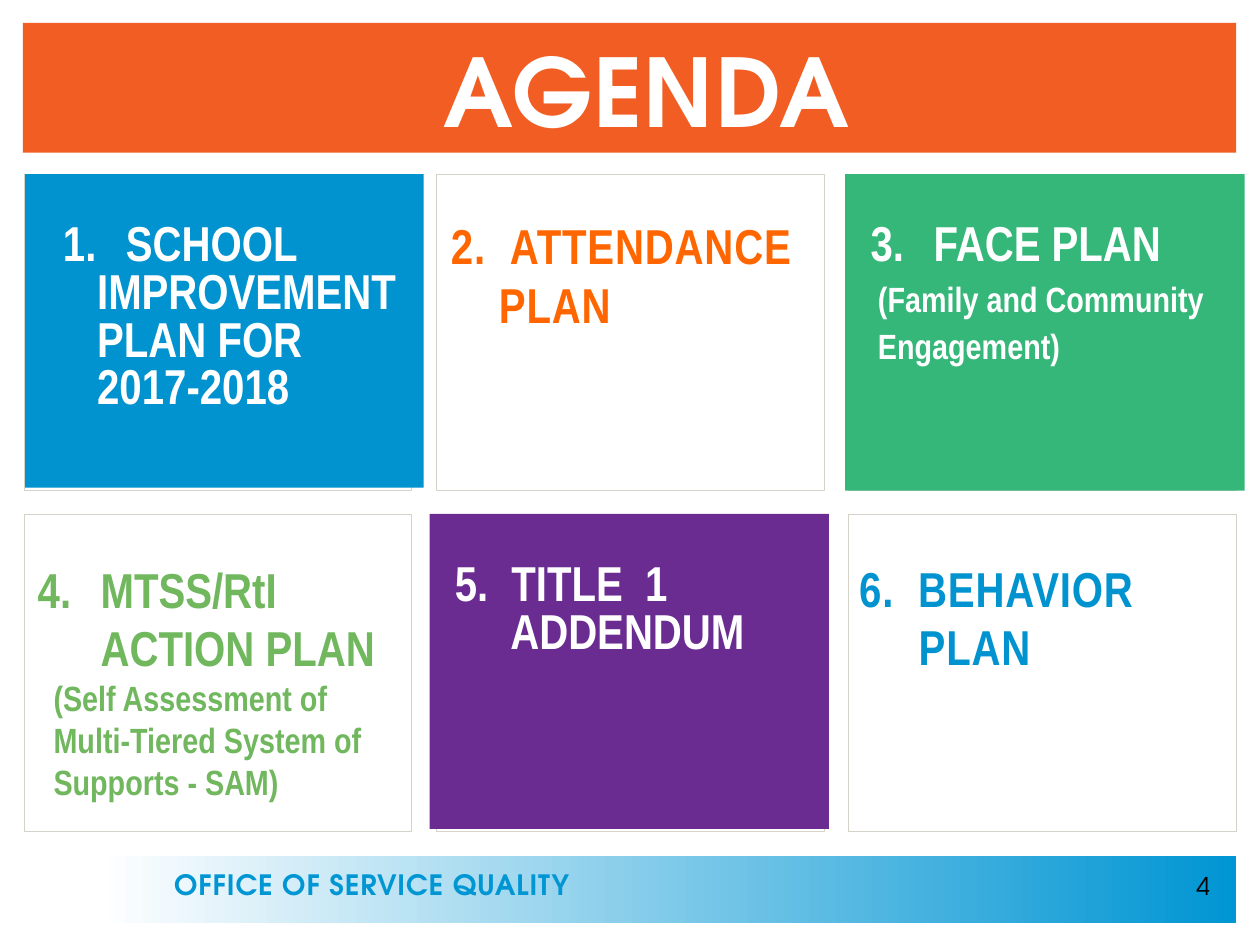
from pptx import Presentation
from pptx.dml.color import RGBColor
from pptx.enum.shapes import MSO_SHAPE
from pptx.enum.text import MSO_ANCHOR, PP_ALIGN
from pptx.oxml.ns import qn
from pptx.util import Cm, Pt
from lxml import etree

RECT = MSO_SHAPE.RECTANGLE
TOP, MID, LOW = MSO_ANCHOR.TOP, MSO_ANCHOR.MIDDLE, MSO_ANCHOR.BOTTOM
LEFT, CENTER, RIGHT = PP_ALIGN.LEFT, PP_ALIGN.CENTER, PP_ALIGN.RIGHT
HEAD, BODY = "TeX Gyre Adventor", "Arial Narrow"
rgb = RGBColor.from_string

deck = Presentation()
deck.slide_width, deck.slide_height = Cm(25.4), Cm(19.05)
slide = deck.slides.add_slide(deck.slide_layouts[6])
shapes = slide.shapes


def add_box(place, fill=None, line=None):
    box = shapes.add_shape(RECT, *[Cm(v) for v in place])
    box.shadow.inherit = False
    if fill:
        box.fill.solid()
        box.fill.fore_color.rgb = rgb(fill)
    else:
        box.fill.background()
    if line:
        box.line.color.rgb = rgb(line)
        box.line.width = Pt(0.25)
    else:
        box.line.fill.background()
    return box


def set_text(para, text, font, size, color, bold=True, track=0, align=LEFT):
    run = para.add_run()
    run.text = text
    if track:
        run._r.get_or_add_rPr().set("spc", str(int(track * 100)))
    para.alignment = align
    para.font.name = font
    para.font.size = Pt(size)
    para.font.bold = bold
    para.font.color.rgb = rgb(color)


# Footer and header bands
foot = add_box((1.98, 17.25, 22.94, 1.35))
foot.fill.gradient()
foot.fill.gradient_angle = 0
for stop, (spot, color) in zip(foot.fill.gradient_stops,
                               [(0, "FFFFFF"), (1, "0095D3")]):
    stop.position = spot
    stop.color.rgb = rgb(color)
add_box((0.46, 0.46, 24.46, 2.62), "F15D22")

# Grid of thin frames
for row in range(2):
    for col in range(3):
        add_box((0.48 + col * 8.31, 3.51 + row * 6.86, 7.82, 6.38),
                line="D5D2C8")

# Title, office name and page number
labels = [
    ("AGENDA", (2.84, 0.51, 20.4, 2.69), 54, "FFFFFF", True, 1, CENTER, LOW,
     (0, 0, 0, 0.25)),
    ("OFFICE OF SERVICE QUALITY", (3.51, 17.48, 11.3, 0.71), 16, "0095D3",
     True, 0.5, LEFT, MID, (0, 0, 0, 0)),
    ("4", (18.72, 17.42, 5.92, 1.02), 14, "000000", False, 0, RIGHT, TOP,
     (0.25, 0.13, 0.25, 0.13)),
]
for text, place, size, color, bold, track, align, anchor, pad in labels:
    frame = shapes.add_textbox(*[Cm(v) for v in place]).text_frame
    frame.word_wrap = True
    frame.vertical_anchor = anchor
    (frame.margin_left, frame.margin_top,
     frame.margin_right, frame.margin_bottom) = [Cm(v) for v in pad]
    set_text(frame.paragraphs[0], text, HEAD, size, color, bold, track, align)

# Cards: place, fill, text colour, left and top inset, tracking,
# auto number (0 = typed), heading indent, then heading and
# further lines as (text, indent, size)
cards = [
    ((8.66, 10.36, 8.05, 6.35), "6A2C91", "FFFFFF", 0.51, 1.22, 0, 0, 1.14,
     "5.\tTITLE  1", [("ADDENDUM", 1.12, 28)]),
    ((0.51, 3.51, 8.03, 6.32), "0093D0", "FFFFFF", 0.76, 1.22, 0, 1, 1.27,
     "SCHOOL", [("IMPROVEMENT", 0.69, 28), ("PLAN FOR", 0.69, 28),
                ("2017-2018", 0.69, 28)]),
    ((17.04, 3.51, 8.05, 6.38), "36B77A", "FFFFFF", 0.51, 1.22, 0, 3, 1.27,
     "FACE PLAN", [("(Family and Community", 0.15, 20),
                   ("Engagement)", 0.15, 20)]),
    ((8.84, 2.95, 7.87, 6.73), None, "FF6600", 0.25, 1.4, 0.5, 0, 1.19,
     "2.\tATTENDANCE", [("PLAN", 0.97, 28)]),
    ((0.51, 10.21, 7.82, 6.45), None, "70B75E", 0.25, 1.06, 0, 4, 1.27,
     "MTSS/RtI ACTION PLAN", [("(Self Assessment of", 0.32, 20),
                              ("Multi-Tiered System of", 0.32, 20),
                              ("Supports - SAM)", 0.32, 20)]),
    ((17.07, 10.36, 7.87, 6.3), None, "0093D0", 0.25, 0.89, 0.5, 0, 1.19,
     "6.\tBEHAVIOR", [("PLAN", 1.2, 28)]),
]
for place, fill, color, left, top, track, num, hang, head, rest in cards:
    if fill:
        box = add_box(place, fill)
    else:
        box = shapes.add_textbox(*[Cm(v) for v in place])
    frame = box.text_frame
    frame.word_wrap = True
    frame.vertical_anchor = TOP
    frame.margin_left, frame.margin_top = Cm(left), Cm(top)
    frame.margin_right, frame.margin_bottom = Cm(0.25), Cm(0.13)
    for i, (text, indent, size) in enumerate([(head, hang, 28)] + rest):
        para = frame.add_paragraph() if i else frame.paragraphs[0]
        props = para._p.get_or_add_pPr()
        props.set("marL", str(Cm(indent)))
        props.set("indent", str(0 if i else -Cm(indent)))
        if num and not i:
            mark = etree.SubElement(props, qn("a:buFont"))
            mark.set("typeface", "+mj-lt")
            mark = etree.SubElement(props, qn("a:buAutoNum"))
            mark.set("type", "arabicPeriod")
            mark.set("startAt", str(num))
        if fill:
            para.line_spacing = Pt(21.2)
            para.space_before = Pt(6 if i else 0)
        set_text(para, text, BODY, size, color, track=track)

deck.save("out.pptx")
